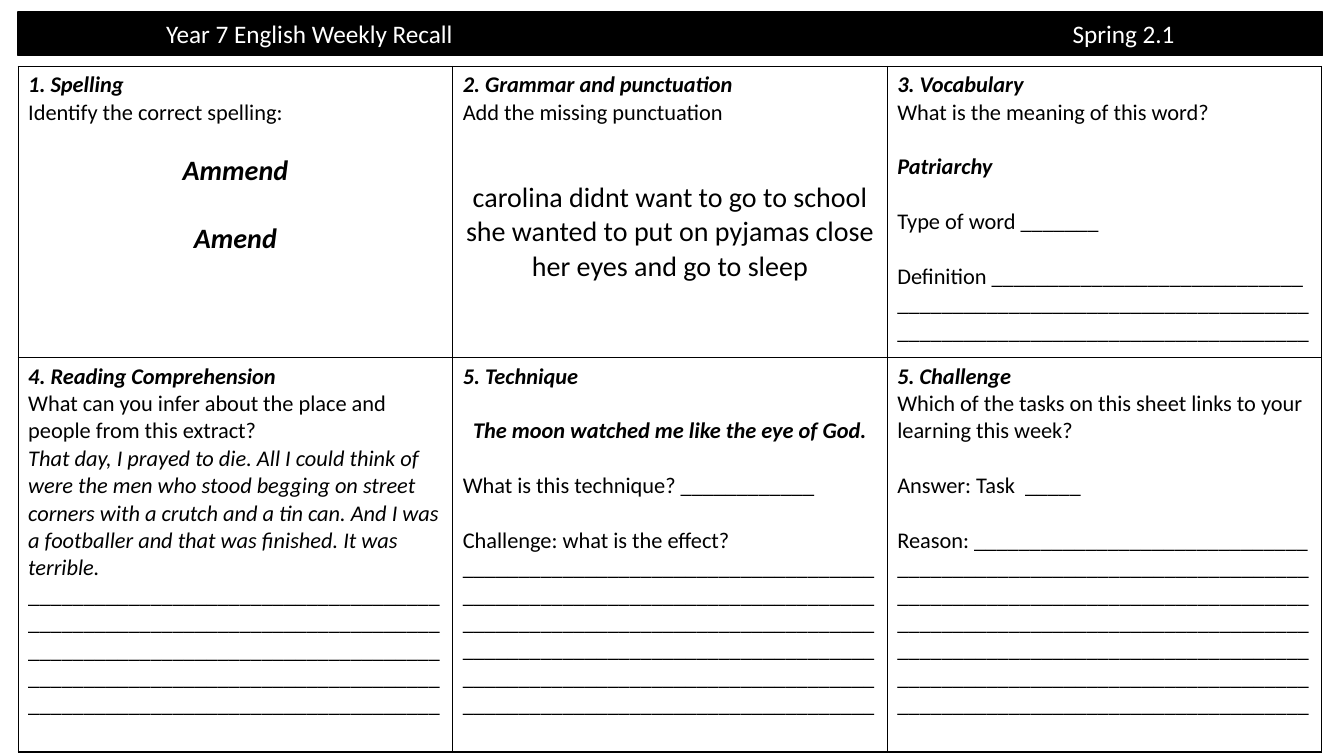
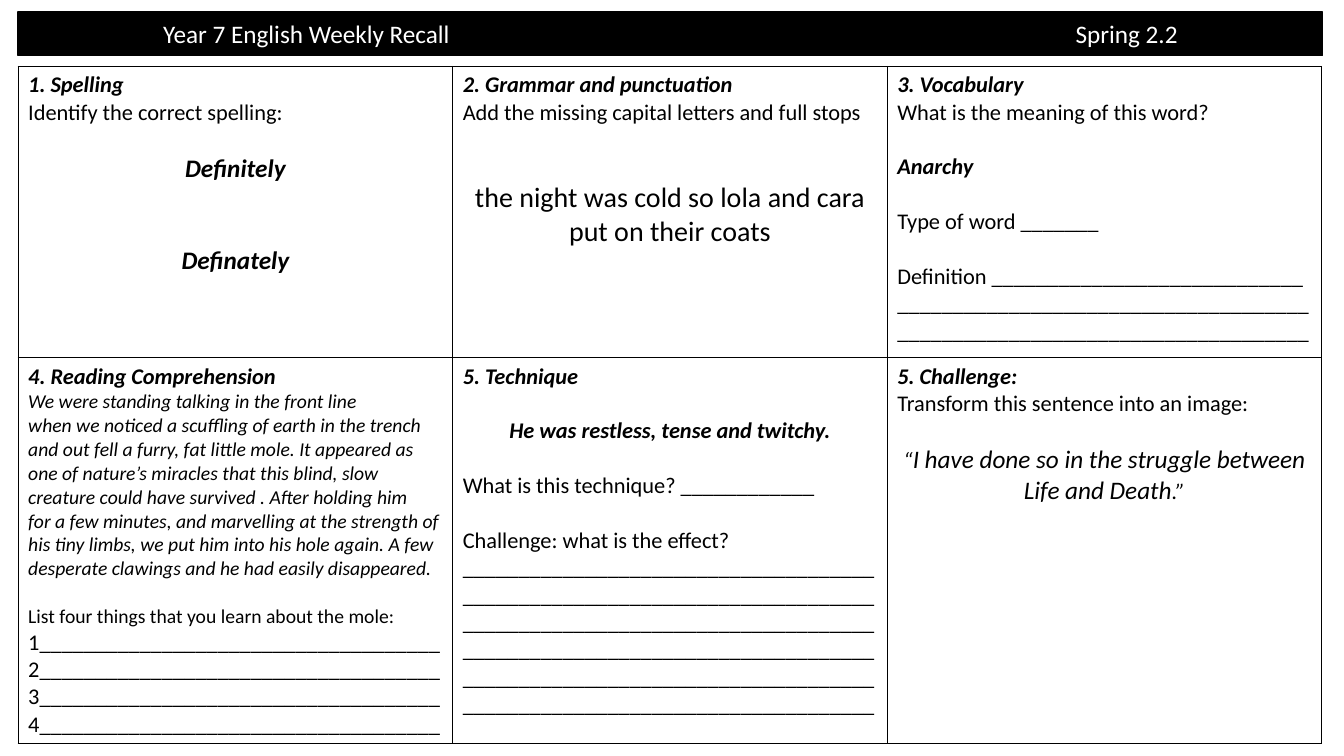
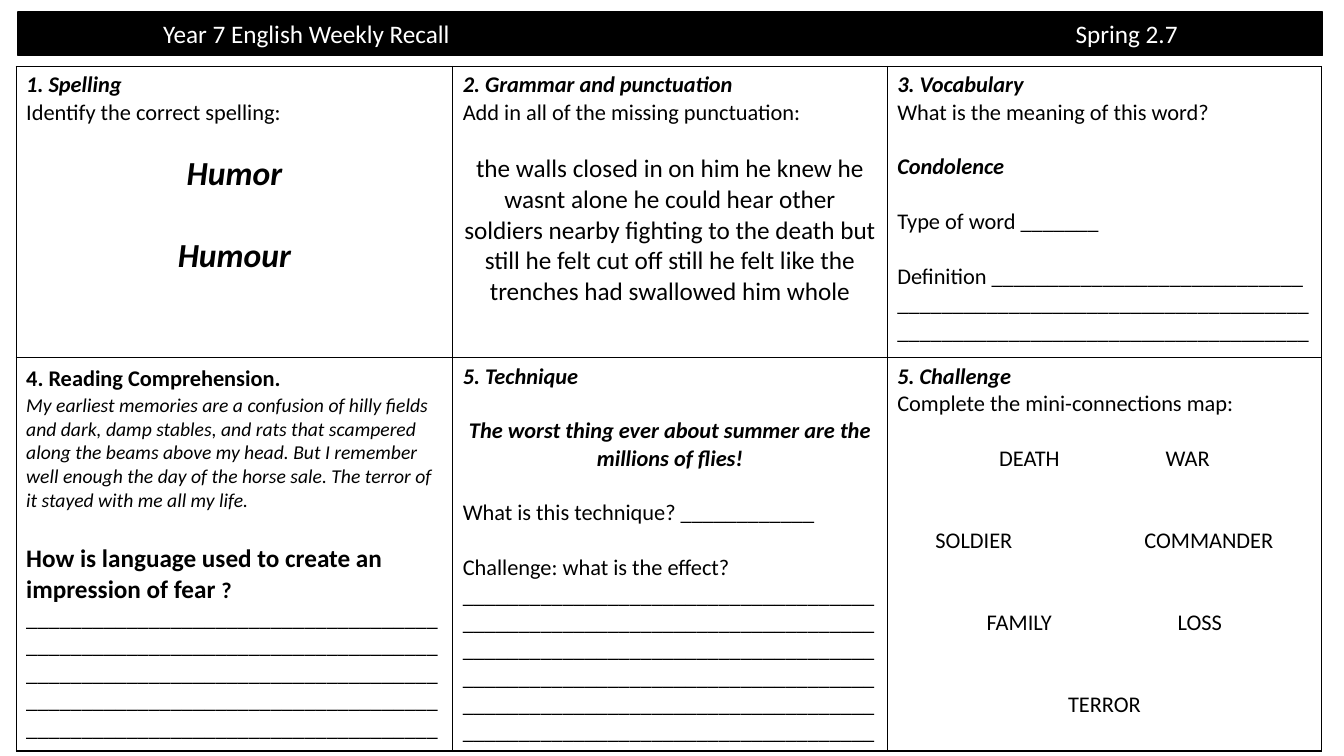
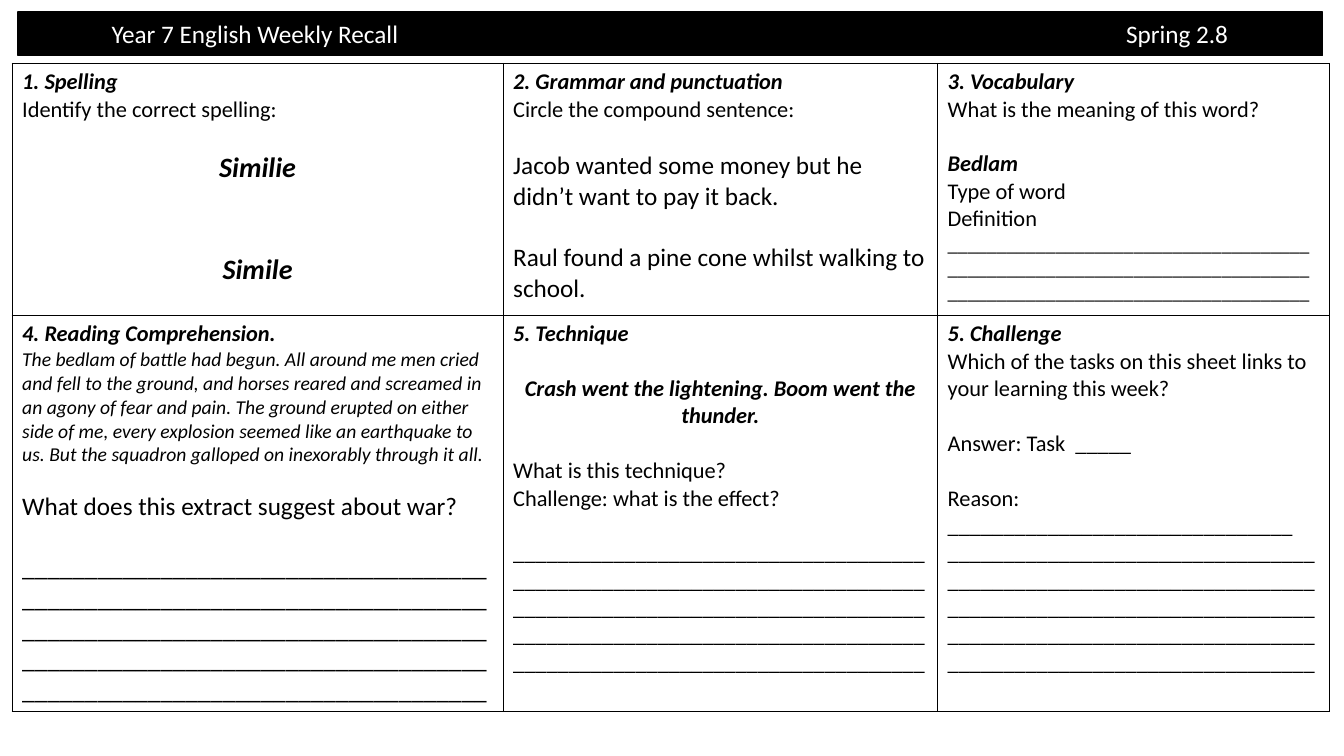
from dataclasses import dataclass
from lxml.etree import SubElement
from pptx import Presentation
from pptx.dml.color import RGBColor
from pptx.enum.shapes import MSO_SHAPE
from pptx.enum.text import MSO_ANCHOR, PP_ALIGN
from pptx.oxml.ns import qn
from pptx.util import Inches, Pt


@dataclass(frozen=True)
class Theme:
    font: str = "Calibri"
    ink: RGBColor = RGBColor(0, 0, 0)
    paper: RGBColor = RGBColor(255, 255, 255)
    extract: int = 14
    body: int = 16
    large: int = 18
    display: int = 20
    poster: int = 24
    line_height: float = 1.22
    border: float = 1


THEME = Theme()


@dataclass
class Line:
    spans: list
    style: str = ""
    centred: bool = False
    gap: int = 0
    tabs: tuple = ()
    tab_kind: str = "ctr"


def line(text, size=THEME.body, style="", centred=False, gap=0, tabs=()):
    return Line([(text, size)], style, centred, gap, tabs)


def heading(text):
    return line(text, style="bi")


def rule(count, width=37):
    return "_" * (count * width)


def spelling(first, second, size, gap):
    return [
        heading("1. Spelling"),
        line("Identify the correct spelling:"),
        line(first, size, "bi", True, THEME.body),
        line(second, size, "bi", True, gap),
    ]


def grammar(task, *sentences):
    return [heading("2. Grammar and punctuation"), line(task), *sentences]


def vocabulary_start(word):
    return [
        heading("3. Vocabulary"),
        line("What is the meaning of this word?"),
        line(word, style="bi", gap=THEME.body),
    ]


def vocabulary(word):
    return vocabulary_start(word) + [
        line("Type of word " + "_" * 7, gap=THEME.body),
        line("Definition " + "_" * 28 + " " + rule(2), gap=THEME.body),
    ]


def technique_start(sentence):
    return [
        heading("5. Technique"),
        line(sentence, style="bi", centred=True, gap=THEME.body),
    ]


def technique(sentence):
    return technique_start(sentence) + [
        line("What is this technique? " + "_" * 12, gap=THEME.body),
        line("Challenge: what is the effect? " + rule(6), gap=THEME.body),
    ]


def link_challenge(reason):
    return [
        heading("5. Challenge"),
        line("Which of the tasks on this sheet links to your learning this week?"),
        line("Answer: Task  _____", gap=THEME.body),
        line("Reason: " + reason, gap=THEME.body),
    ]


class RecallDeck:
    def __init__(self, theme):
        self.theme = theme
        self.deck = Presentation()
        self.deck.slide_width = Inches(13.33)
        self.deck.slide_height = Inches(7.5)
        self.page = None

    def add_page(self):
        self.page = self.deck.slides.add_slide(self.deck.slide_layouts[6])

    def add_lines(self, frame, lines, color):
        for index, item in enumerate(lines):
            para = frame.add_paragraph() if index else frame.paragraphs[0]
            para.alignment = PP_ALIGN.CENTER if item.centred else PP_ALIGN.LEFT
            if item.gap:
                para.space_before = Pt(round(item.gap * self.theme.line_height, 1))
            if item.tabs:
                self.set_tabs(para, item)
            for text, size in item.spans:
                span = para.add_run()
                span.text = text
                span.font.name = self.theme.font
                span.font.size = Pt(size)
                span.font.bold = "b" in item.style
                span.font.italic = "i" in item.style
                span.font.color.rgb = color

    def set_tabs(self, para, item):
        stops = SubElement(para._p.get_or_add_pPr(), qn("a:tabLst"))
        for position in item.tabs:
            SubElement(stops, qn("a:tab"), pos=str(Inches(position)), algn=item.tab_kind)

    def add_band(self, term, tabs):
        band = self.page.shapes.add_shape(
            MSO_SHAPE.RECTANGLE, Inches(0.18), Inches(0.12), Inches(12.94), Inches(0.43))
        band.shadow.inherit = False
        band.fill.solid()
        band.fill.fore_color.rgb = self.theme.ink
        band.line.color.rgb = self.theme.ink
        band.line.width = Pt(self.theme.border)
        band.text_frame.word_wrap = True
        band.text_frame.vertical_anchor = MSO_ANCHOR.MIDDLE
        title = Line([(f"\tYear 7 English Weekly Recall\t{term}", self.theme.large)],
                     tabs=tabs, tab_kind="l")
        self.add_lines(band.text_frame, [title], self.theme.paper)

    def add_border(self, cell):
        properties = cell._tc.get_or_add_tcPr()
        for side in ("a:lnL", "a:lnR", "a:lnT", "a:lnB"):
            edge = SubElement(properties, qn(side), w=str(Pt(self.theme.border)))
            fill = SubElement(edge, qn("a:solidFill"))
            SubElement(fill, qn("a:srgbClr"), val=str(self.theme.ink))

    def add_grid(self, left, top, widths, heights, tasks):
        table = self.page.shapes.add_table(
            len(heights), len(widths), Inches(left), Inches(top),
            Inches(sum(widths)), Inches(sum(heights))).table
        table.first_row = False
        table.horz_banding = False
        for column, width in zip(table.columns, widths):
            column.width = Inches(width)
        for row, height in zip(table.rows, heights):
            row.height = Inches(height)
        for cell, lines in zip(table.iter_cells(), tasks):
            self.add_border(cell)
            cell.fill.background()
            self.add_lines(cell.text_frame, lines, self.theme.ink)

    def add_sheet(self, term, tasks, tabs=(1.34, 10.39), left=0.18, top=0.66,
                  widths=(4.31, 4.31, 4.31), heights=(2.89, 3.73)):
        self.add_page()
        self.add_band(term, tabs)
        self.add_grid(left, top, widths, heights, tasks)


def main():
    recall = RecallDeck(THEME)
    extract, body, large = THEME.extract, THEME.body, THEME.large
    display, poster = THEME.display, THEME.poster

    recall.add_sheet("Spring 2.1", [
        spelling("Ammend", "Amend", display, display),
        grammar(
            "Add the missing punctuation",
            line("carolina didnt want to go to school she wanted to put on pyjamas "
                 "close her eyes and go to sleep", display, centred=True, gap=2 * body)),
        vocabulary("Patriarchy"),
        [
            heading("4. Reading Comprehension"),
            line("What can you infer about the place and people from this extract?"),
            line("That day, I prayed to die. All I could think of were the men who stood "
                 "begging on street corners with a crutch and a tin can. And I was a "
                 "footballer and that was finished. It was terrible.", style="i"),
            line(rule(5)),
        ],
        technique("The moon watched me like the eye of God."),
        link_challenge("_" * 30 + " " + rule(6)),
    ], tabs=(1.37, 10.36), heights=(2.89, 3.91))

    recall.add_sheet("Spring 2.2", [
        spelling("Definitely", "Definately", large, 2 * large),
        grammar(
            "Add the missing capital letters and full stops",
            line("the night was cold so lola and cara put on their coats",
                 display, centred=True, gap=2 * body)),
        vocabulary("Anarchy"),
        [
            heading("4. Reading Comprehension"),
            line("We were standing talking in the front line", extract, "i"),
            line("when we noticed a scuffling of earth in the trench and out fell a furry, "
                 "fat little mole. It appeared as one of nature’s miracles that this blind, "
                 "slow creature could have survived . After holding him", extract, "i"),
            line("for a few minutes, and marvelling at the strength of his tiny limbs, we "
                 "put him into his hole again. A few desperate clawings and he had easily "
                 "disappeared.", extract, "i"),
            line("List four things that you learn about the mole:", extract, gap=extract),
            *[line(f"{number}" + rule(1, 36)) for number in range(1, 5)],
        ],
        technique("He was restless, tense and twitchy."),
        [
            heading("5. Challenge:"),
            line("Transform this sentence into an image:"),
            Line([("“", body),
                  ("I have done so in the struggle between Life and Death", large),
                  (".”", body)], "i", True, body),
        ],
    ])

    connections = [
        ("DEATH", "WAR", (1.31, 2.88), body),
        ("SOLDIER", "COMMANDER", (0.76, 3.09), 2 * body),
        ("FAMILY", "LOSS", (1.21, 3.0), 2 * body),
    ]
    recall.add_sheet("Spring 2.7", [
        spelling("Humor", "Humour", poster, poster),
        grammar(
            "Add in all of the missing punctuation:",
            line("the walls closed in on him he knew he wasnt alone he could hear other "
                 "soldiers nearby fighting to the death but still he felt cut off still he "
                 "felt like the trenches had swallowed him whole",
                 large, centred=True, gap=body)),
        vocabulary("Condolence"),
        [
            Line([("4. Reading Comprehension.", body), (" ", large)], "b"),
            line("My earliest memories are a confusion of hilly fields and dark, damp "
                 "stables, and rats that scampered along the beams above my head. But I "
                 "remember well enough the day of the horse sale. The terror of it stayed "
                 "with me all my life.", extract, "i"),
            Line([("How is language used to create an impression of fear ", large),
                  ("?", body)], "b", gap=large),
            line(rule(5)),
        ],
        technique("The worst thing ever about summer are the millions of flies!"),
        [
            heading("5. Challenge"),
            line("Complete the mini-connections map:"),
            *[line(f"\t{first}\t{second}", gap=gap, tabs=tabs)
              for first, second, tabs, gap in connections],
            line("TERROR", centred=True, gap=2 * body),
        ],
    ], left=0.16, widths=(4.33, 4.31, 4.31))

    recall.add_sheet("Spring 2.8", [
        spelling("Similie", "Simile", display, 2 * display),
        grammar(
            "Circle the compound sentence:",
            line("Jacob wanted some money but he didn’t want to pay it back.",
                 large, gap=body),
            line("Raul found a pine cone whilst walking to school.", large, gap=large)),
        vocabulary_start("Bedlam") + [
            line("Type of word"),
            line("Definition"),
            line("_" * 111, extract),
        ],
        [
            heading("4. Reading Comprehension."),
            line("The bedlam of battle had begun. All around me men cried and fell to the "
                 "ground, and horses reared and screamed in an agony of fear and pain. The "
                 "ground erupted on either side of me, every explosion seemed like an "
                 "earthquake to us. But the squadron galloped on inexorably through it all.",
                 extract, "i"),
            line("What does this extract suggest about war?", large, gap=extract),
            line(rule(5), large, gap=large),
        ],
        technique_start("Crash went the lightening. Boom went the thunder.") + [
            line("What is this technique?", gap=body),
            line("Challenge: what is the effect?"),
            line(rule(5), gap=body),
        ],
        link_challenge("_" * 31 + " " + rule(5, 33)),
    ], tabs=(0.83, 10.89), left=0.12, top=0.63,
        widths=(4.87, 4.31, 3.89), heights=(2.5, 3.93))

    recall.deck.save("out.pptx")


if __name__ == "__main__":
    main()
